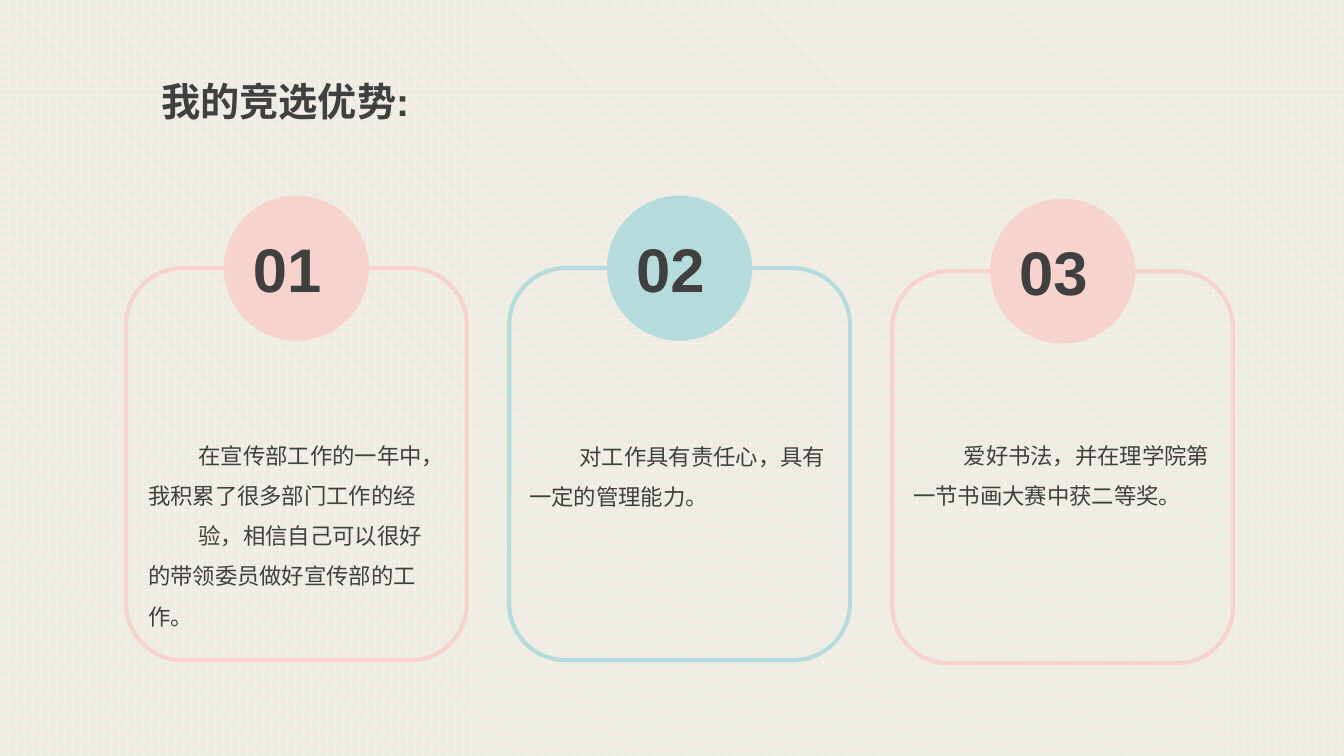
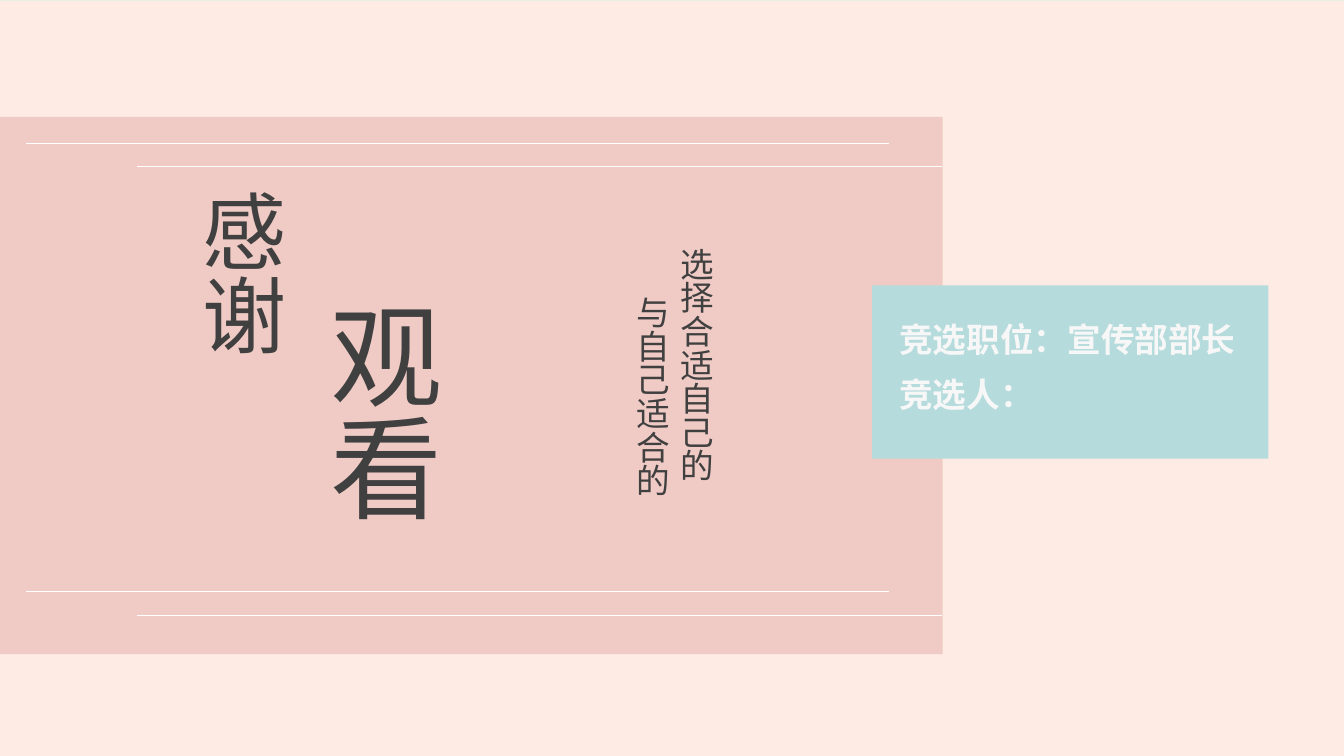
from dataclasses import dataclass
from typing import Any, Optional

from pptx import Presentation
from pptx.dml.color import RGBColor
from pptx.enum.dml import MSO_PATTERN
from pptx.enum.shapes import MSO_CONNECTOR, MSO_SHAPE
from pptx.enum.text import MSO_ANCHOR, MSO_AUTO_SIZE, PP_ALIGN
from pptx.oxml.ns import qn
from pptx.util import Inches, Pt

# Shared palette and text formats
PEACH = RGBColor(0xFE, 0xEB, 0xE4)
SAGE = RGBColor(0xEA, 0xED, 0xE4)
PINK = RGBColor(0xF6, 0xD4, 0xCD)
ROSE = RGBColor(0xF0, 0xCB, 0xC5)
TEAL = RGBColor(0xB5, 0xDB, 0xDC)
DARK = RGBColor(0x40, 0x40, 0x40)
LIGHT = RGBColor(0xF7, 0xF7, 0xF7)
WHITE = RGBColor(0xFF, 0xFF, 0xFF)

TITLE_FONT = {"size": Pt(28), "bold": True}
NUMBER_FONT = {"size": Pt(44), "bold": True}
BODY_FONT = {"size": Pt(16), "bold": False}
SLOGAN_FONT = {"size": Pt(24), "bold": False}
LABEL_FONT = {"size": Pt(24), "bold": True}
THANKS_FONT = {"size": Pt(60), "bold": False}
WATCH_FONT = {"size": Pt(80), "bold": False}

TITLE_ONLY, TITLE_AND_BODY = 5, 1


@dataclass(frozen=True)
class Box:
    left: float
    top: float
    width: float
    height: float

    def lengths(self) -> tuple:
        return tuple(Inches(v) for v in (self.left, self.top, self.width, self.height))


@dataclass(frozen=True)
class Line:
    text: str
    margin: float = 0
    indent: float = 0
    spacing: float = 1.0
    before: float = 0


@dataclass(frozen=True)
class Card:
    number: str
    color: RGBColor
    top: float
    text_box: Box
    paragraphs: tuple


CARD_LEFT, CARD_PITCH = 1.25, 3.8
CARDS = (
    Card("01", PINK, 2.66, Box(1.37, 4.2, 3.05, 2.12),
         ("在宣传部工作的一年中，我积累了很多部门工作的经",
          "验，相信自己可以很好的带领委员做好宣传部的工作。")),
    Card("02", TEAL, 2.66, Box(5.15, 4.21, 3.28, 0.86),
         ("对工作具有责任心，具有一定的管理能力。",)),
    Card("03", PINK, 2.69, Box(8.96, 4.2, 3.26, 0.86),
         ("爱好书法，并在理学院第一节书画大赛中获二等奖。",)),
)


def write_text(shape: Any, lines: list, font: dict, color: RGBColor = DARK,
               anchor: MSO_ANCHOR = MSO_ANCHOR.TOP, vertical: bool = False) -> None:
    """Fill a text box or placeholder with formatted paragraphs."""
    frame = shape.text_frame
    frame.word_wrap = True
    frame.auto_size = MSO_AUTO_SIZE.NONE
    frame.vertical_anchor = anchor
    if vertical:
        shape.element.txBody.find(qn("a:bodyPr")).set("vert", "eaVert")
    for index, line in enumerate(lines):
        paragraph = frame.add_paragraph() if index else frame.paragraphs[0]
        formats = {"alignment": PP_ALIGN.LEFT, "line_spacing": line.spacing,
                   "space_before": Pt(line.before), "space_after": Pt(0)}
        for name, value in formats.items():
            setattr(paragraph, name, value)
        run = paragraph.add_run()
        run.text = line.text
        for name, value in {"name": "Arial", **font}.items():
            setattr(run.font, name, value)
        run.font.color.rgb = color
        # Indents and bullets have no public setter
        properties = paragraph._p.get_or_add_pPr()
        properties.set("marL", str(Inches(line.margin)))
        properties.set("indent", str(Inches(line.indent)))
        if shape.is_placeholder:
            properties.append(properties.makeelement(qn("a:buNone"), {}))


def place(shape: Any, box: Box) -> None:
    """Move a placeholder and bring it to the front."""
    shape.left, shape.top, shape.width, shape.height = box.lengths()
    shape.element.getparent().append(shape.element)


def add_text(shapes: Any, box: Box, lines: list, font: dict,
             vertical: bool = False) -> None:
    write_text(shapes.add_textbox(*box.lengths()), lines, font, vertical=vertical)


def add_shape(shapes: Any, kind: MSO_SHAPE, box: Box, fill: Optional[RGBColor] = None,
              line: Optional[RGBColor] = None) -> None:
    shape = shapes.add_shape(kind, *box.lengths())
    shape.shadow.inherit = False
    if fill is None:
        shape.fill.background()
    else:
        shape.fill.solid()
        shape.fill.fore_color.rgb = fill
    if line is None:
        shape.line.fill.background()
    else:
        shape.line.color.rgb = line
        shape.line.width = Pt(3)


def add_rule(shapes: Any, left: float, right: float, top: float) -> None:
    rule = shapes.add_connector(MSO_CONNECTOR.STRAIGHT, Inches(left), Inches(top),
                                Inches(right), Inches(top))
    rule.line.color.rgb = WHITE
    rule.line.width = Pt(0.5)
    properties = rule.element.spPr
    properties.append(properties.makeelement(qn("a:effectLst"), {}))


def add_slide(presentation: Any, layout: int, pattern: MSO_PATTERN) -> Any:
    """Add a slide with a patterned background and no footer placeholders."""
    slide = presentation.slides.add_slide(presentation.slide_layouts[layout])
    fill = slide.background.fill
    fill.patterned()
    fill.pattern = pattern
    fill.fore_color.rgb = PEACH
    fill.back_color.rgb = SAGE
    return slide


def add_card(slide: Any, card: Card, left: float) -> None:
    shapes = slide.shapes.add_group_shape().shapes
    add_shape(shapes, MSO_SHAPE.ROUNDED_RECTANGLE, Box(left, card.top, 3.38, 3.89),
              line=card.color)
    add_shape(shapes, MSO_SHAPE.OVAL, Box(left + 0.97, card.top - 0.72, 1.44, 1.44),
              fill=card.color)
    add_text(shapes, Box(left + 1.16, card.top - 0.42, 0.98, 0.84),
             [Line(card.number)], NUMBER_FONT)
    add_text(slide.shapes, card.text_box,
             [Line(text, indent=0.5, spacing=1.5) for text in card.paragraphs], BODY_FONT)


def build_strengths(presentation: Any) -> None:
    slide = add_slide(presentation, TITLE_ONLY, MSO_PATTERN.PLAID)
    title = slide.shapes.title
    place(title, Box(1.5, 0.74, 2.92, 0.57))
    write_text(title, [Line("我的竞选优势:", spacing=0.9)], TITLE_FONT,
               anchor=MSO_ANCHOR.MIDDLE)
    for index, card in enumerate(CARDS):
        add_card(slide, card, CARD_LEFT + index * CARD_PITCH)


def build_thanks(presentation: Any) -> None:
    slide = add_slide(presentation, TITLE_AND_BODY, MSO_PATTERN.DARK_HORIZONTAL)
    shapes = slide.shapes
    title, candidate = shapes.title, slide.placeholders[1]

    # Rose band with the vertical thanks and slogan
    add_shape(shapes, MSO_SHAPE.RECTANGLE, Box(-0.01, 1.16, 9.36, 5.33), fill=ROSE)
    add_text(shapes, Box(6.01, 2.36, 1.14, 2.74),
             [Line("选择合适自己的"), Line("与自己适合的", margin=0.48, before=2)],
             SLOGAN_FONT, vertical=True)
    place(title, Box(1.79, 1.83, 1.21, 2.56))
    write_text(title, [Line("感谢")], THANKS_FONT, vertical=True)
    add_text(shapes, Box(2.96, 2.88, 1.55, 2.83), [Line("观看")], WATCH_FONT,
             vertical=True)

    # Candidate panel
    add_shape(shapes, MSO_SHAPE.RECTANGLE, Box(8.65, 2.83, 3.93, 1.72), fill=TEAL)
    place(candidate, Box(8.82, 3.11, 3.66, 1.14))
    write_text(candidate, [Line("竞选职位：宣传部部长"), Line("竞选人：", before=11)],
               LABEL_FONT, LIGHT)

    # Paired rules at the top and bottom of the band
    for top in (1.42, 5.87):
        add_rule(shapes, 0.26, 8.82, top)
        add_rule(shapes, 1.36, 9.34, top + 0.23)


def main() -> None:
    presentation = Presentation()
    presentation.slide_width = Inches(13.33)
    presentation.slide_height = Inches(7.5)
    build_strengths(presentation)
    build_thanks(presentation)
    presentation.save("out.pptx")


if __name__ == "__main__":
    main()
